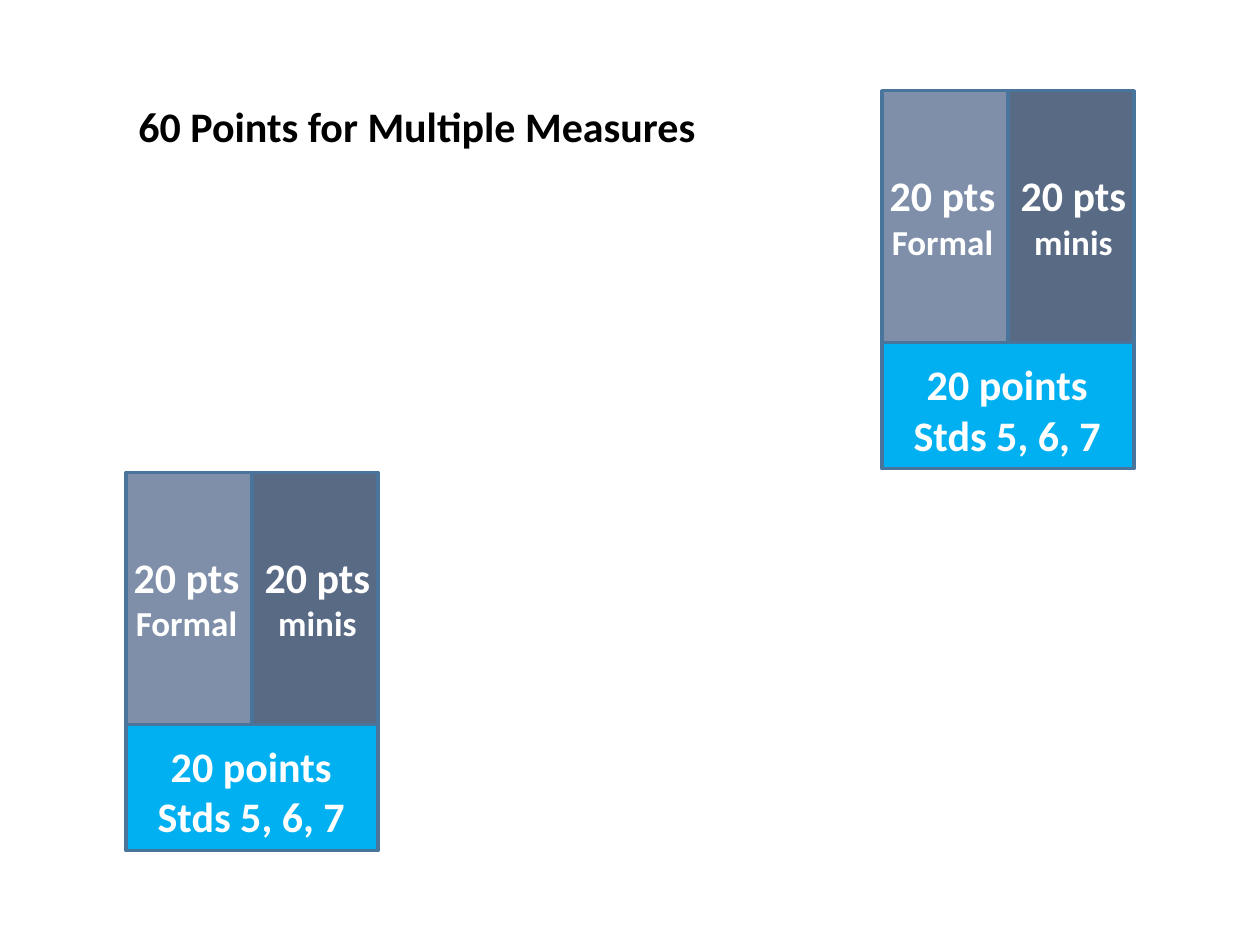
from pptx import Presentation
from pptx.dml.color import RGBColor
from pptx.enum.shapes import MSO_SHAPE
from pptx.enum.text import PP_ALIGN
from pptx.util import Cm, Pt

RECT = MSO_SHAPE.RECTANGLE
LEFT = PP_ALIGN.LEFT
CENTER = PP_ALIGN.CENTER
UNIT = 2.54


def color(code):
    return RGBColor.from_string(code)


def add_text(slide, box, lines, tint, align):
    frame = slide.shapes.add_textbox(*map(Cm, box)).text_frame
    frame.word_wrap = False
    frame.text = "\n".join(text for text, size in lines)
    for para, (text, size) in zip(frame.paragraphs, lines):
        para.alignment = align
        for run in para.runs:
            run.font.name = "Calibri"
            run.font.size = Pt(size)
            run.font.bold = True
            run.font.color.rgb = color(tint)
    return frame


def add_tile(slide, box, fill):
    tile = slide.shapes.add_shape(RECT, *map(Cm, box))
    tile.shadow.inherit = False
    tile.fill.solid()
    tile.fill.fore_color.rgb = color(fill)
    tile.line.color.rgb = color("49749B")
    tile.line.width = Pt(2)


def add_title(slide, box):
    lines = [("60 Points for Multiple Measures", 24)]
    frame = add_text(slide, box, lines, "000000", LEFT)
    frame.paragraphs[0].space_after = Pt(12)


def add_block(slide, box):
    left, top, width, height = box
    half, third = width / 2, height / 3
    tall = height - third
    parts = [
        ((0, tall, width, third), "00B0F0", (0.3, 5.28, 4.45, 2.31),
         [("20 points", 24), ("Stds 5, 6, 7", 24)]),
        ((0, 0, half, tall), "7F8FA9", (-0.1, 1.47, 2.64, 2.13),
         [("20 pts", 24), ("Formal", 20)]),
        ((half, 0, half, tall), "596A85", (half, 1.47, 2.64, 2.13),
         [("20 pts", 24), ("minis", 20)]),
    ]
    for tile, fill, label, lines in parts:
        tile, label = [(left + x, top + y, w, h)
                       for x, y, w, h in (tile, label)]
        add_tile(slide, tile, fill)
        add_text(slide, label, lines, "FFFFFF", CENTER)


def main():
    deck = Presentation()
    deck.slide_width = Cm(25.4)
    deck.slide_height = Cm(19.05)
    slide = deck.slides.add_slide(deck.slide_layouts[6])
    add_title(slide, (UNIT, 1.9, 12.7, 1.27))
    for left, top in [(1, 3.75), (7, 0.72)]:
        add_block(slide, (left * UNIT, top * UNIT, 2 * UNIT, 3 * UNIT))
    deck.save("out.pptx")


if __name__ == "__main__":
    main()
